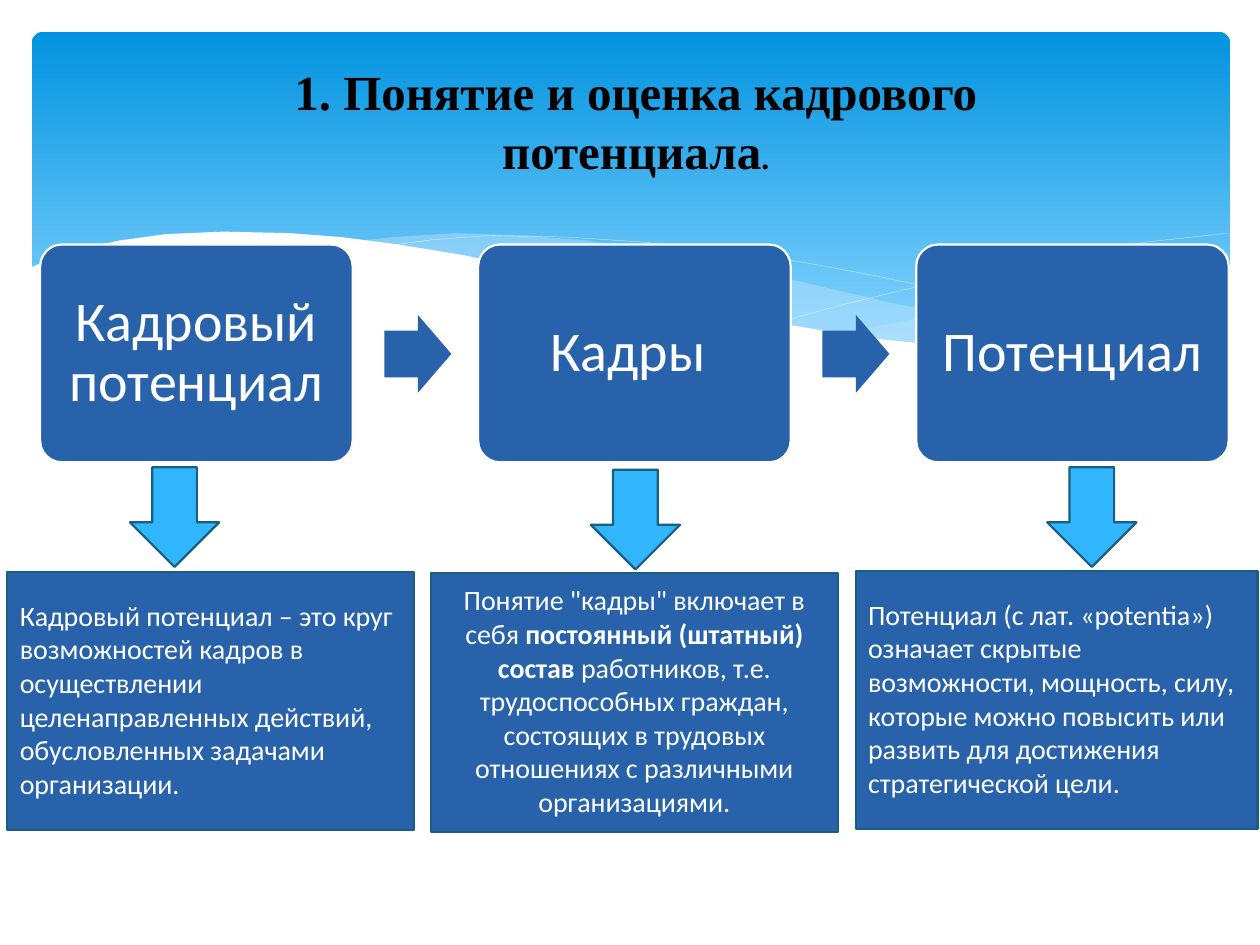
from pptx import Presentation
from pptx.dml.color import RGBColor
from pptx.enum.shapes import MSO_SHAPE as Preset
from pptx.enum.text import MSO_ANCHOR as Anchor, PP_ALIGN as Align
from pptx.oxml.ns import qn
from pptx.util import Cm, Pt
from lxml.etree import SubElement

WHITE, NAVY, SKY, EDGE, MIST = "FFFFFF", "2862AA", "31B6FD", "195F84", "C6E7FC"
CARD_PITCH = 8.83
CARDS = ["Кадровый потенциал", "Кадры ", "Потенциал "]
DEFINITIONS = [
    ((0.15, 11.53, 8.2, 5.21), Align.LEFT, [
        ("Кадровый потенциал – это круг возможностей кадров в осуществлении "
         "целенаправленных действий, обусловленных задачами организации.", {})]),
    ((8.69, 11.56, 8.2, 5.21), Align.CENTER, [
        ('Понятие "кадры" включает в себя ', {}),
        ("постоянный (штатный) состав", {"bold": True}),
        (" работников, т.е. трудоспособных граждан, состоящих в трудовых "
         "отношениях с различными организациями.", {})]),
    ((17.25, 11.51, 8.1, 5.21), Align.LEFT, [
        ("Потенциал (с лат. «potentia») означает скрытые возможности, мощность, "
         "силу, которые можно повысить или развить для достижения "
         "стратегической цели.", {})]),
]
DOWN_ARROWS = [(2.62, 9.42), (11.91, 9.47), (21.11, 9.42)]

RIGHT_WAVE = [
    (24.77, 5.08), (23.75, 5.26), (22.63, 5.49), (21.87, 5.66), (20.45, 6.02),
    (19.13, 6.3), (17.93, 6.53), (16.79, 6.73), (17.91, 6.88), (18.92, 6.99),
    (20.4, 7.06), (21.69, 7.01), (22.78, 6.86), (23.75, 6.65), (24.79, 6.27)]
MIDDLE_WAVE = [
    (22.68, 6.93), (21.26, 6.73), (19.69, 6.45), (17.93, 6.1), (15.98, 5.64),
    (14.45, 5.28), (13.06, 5.03), (11.81, 4.85), (10.67, 4.75), (9.17, 4.7),
    (7.95, 4.78), (7.26, 4.85), (8.69, 5.05), (10.26, 5.36), (11.4, 5.64),
    (13.46, 6.1), (15.27, 6.48), (16.89, 6.76), (18.34, 6.96), (19.63, 7.04),
    (20.78, 7.06), (21.77, 7.04)]
FALLING_CURVE = [
    (7.85, 4.95), (8.74, 4.83), (9.83, 4.75), (11.43, 4.78), (12.95, 4.88),
    (14.78, 5.08), (16.15, 5.28), (17.65, 5.56), (19.3, 5.92), (21.11, 6.38),
    (23.04, 6.91)]
RISING_CURVE = [
    (15.57, 6.53), (17.07, 6.12), (19, 5.66), (20.47, 5.33), (22, 5.05),
    (23.11, 4.88), (24.77, 4.7)]
WHITE_WAVE = [
    (24.82, 6.25), (23.88, 6.58), (22.83, 6.83), (21.59, 6.99), (20.55, 7.04),
    (18.9, 6.96), (17.48, 6.81), (15.9, 6.55), (14.1, 6.22), (12.07, 5.77),
    (10.62, 5.41), (9.27, 5.13), (8.03, 4.93), (6.88, 4.78), (5.84, 4.7),
    (4.5, 4.67), (3.35, 4.72), (2.41, 4.85), (1.7, 5), (1.17, 5.16),
    (0.58, 5.41), (0.58, 8.36), (24.82, 8.36)]


def color(value):
    """Turn a hex string into a colour."""
    return RGBColor.from_string(value)


def apply(target, formats):
    """Set every attribute named in the format dict."""
    for name, value in formats.items():
        setattr(target, name, value)


def paint(shape, fill=None, line=None, width=1.25, alpha=None):
    """Give a shape its fill, outline and transparency, without shadow."""
    shape.shadow.inherit = False
    if fill:
        shape.fill.solid()
        shape.fill.fore_color.rgb = color(fill)
    else:
        shape.fill.background()
    if line:
        shape.line.color.rgb = color(line)
        shape.line.width = Pt(width)
    else:
        shape.line.fill.background()
    if alpha:
        tint = shape.fill._xPr.find(qn("a:solidFill"))[0]
        SubElement(tint, qn("a:alpha")).set("val", str(alpha * 1000))


def add_preset(slide, preset, box, adjustments=(), **style):
    """Add a painted preset shape at a box in centimetres."""
    shape = slide.shapes.add_shape(preset, *map(Cm, box))
    for index, value in enumerate(adjustments):
        shape.adjustments[index] = value
    paint(shape, **style)
    return shape


def add_outline(slide, points, close=True, **style):
    """Add a painted freeform through points in centimetres."""
    start, *others = [(Cm(x), Cm(y)) for x, y in points]
    builder = slide.shapes.build_freeform(*start)
    builder.add_line_segments(others, close=close)
    paint(builder.convert_to_shape(), **style)


def write(shape, runs, font, ink, align, frame=None, spacing=1.0):
    """Write one paragraph of runs into a shape."""
    apply(shape.text_frame, {"word_wrap": True, **(frame or {})})
    paragraph = shape.text_frame.paragraphs[0]
    apply(paragraph, {"alignment": align, "line_spacing": spacing})
    for text, changes in runs:
        run = paragraph.add_run()
        run.text = text
        apply(run.font, {**font, **changes})
        run.font.color.rgb = color(ink)


def add_header(slide):
    """Draw the gradient banner and the waves over it."""
    banner = add_preset(slide, Preset.ROUNDED_RECTANGLE,
                        (0.64, 0.64, 24.16, 6.86), [0.034])
    banner.fill.gradient()
    banner.fill.gradient_angle = 270
    stops = zip(banner.fill.gradient_stops, ((0, "0293E0"), (0.9, "83D3FE")))
    for stop, (position, tint) in stops:
        stop.position = position
        stop.color.rgb = color(tint)
    add_outline(slide, RIGHT_WAVE, fill=MIST, alpha=29)
    add_outline(slide, MIDDLE_WAVE, fill=MIST, alpha=40)
    for curve in (FALLING_CURVE, RISING_CURVE):
        add_outline(slide, curve, close=False, line=WHITE, width=0.1)
    add_outline(slide, WHITE_WAVE, fill=WHITE)


def add_cards(slide):
    """Draw the row of term cards with arrows between them."""
    margins = ("margin_left", "margin_right", "margin_top", "margin_bottom")
    frame = {"vertical_anchor": Anchor.MIDDLE, **dict.fromkeys(margins, Cm(0.3))}
    for index, term in enumerate(CARDS):
        shift = index * CARD_PITCH
        if index:
            add_preset(slide, Preset.RIGHT_ARROW,
                       (7.75 + shift - CARD_PITCH, 6.35, 1.35, 1.57),
                       [0.6, 0.5], fill=NAVY)
        card = add_preset(slide, Preset.ROUNDED_RECTANGLE,
                          (0.81 + shift, 4.93, 6.3, 4.39), [0.1],
                          fill=NAVY, line=WHITE)
        write(card, [(term, {})], {"name": "Calibri", "size": Pt(32)}, WHITE,
              Align.CENTER, frame, 0.9)


def add_definitions(slide):
    """Draw the definition boxes and the arrows leading to them."""
    frame = {"vertical_anchor": Anchor.MIDDLE, "margin_bottom": Cm(0.21)}
    for box, align, runs in DEFINITIONS:
        definition = add_preset(slide, Preset.RECTANGLE, box, fill=NAVY, line=EDGE)
        write(definition, runs, {"name": "Calibri", "size": Pt(16)}, WHITE, align,
              frame)
    for left, top in DOWN_ARROWS:
        add_preset(slide, Preset.DOWN_ARROW, (left, top, 1.8, 2.01),
                   fill=SKY, line=EDGE)


def add_title(slide):
    """Write the slide title."""
    title = slide.shapes.add_textbox(*map(Cm, (5.31, 1.12, 15.01, 2.64)))
    write(title, [("1. Понятие и оценка кадрового потенциала", {}),
                  (".", {"size": Pt(18)})],
          {"name": "Times New Roman", "size": Pt(28), "bold": True},
          "000000", Align.CENTER)


def main():
    """Build and save the slide."""
    deck = Presentation()
    apply(deck, {"slide_width": Cm(25.4), "slide_height": Cm(19.05)})
    slide = deck.slides.add_slide(deck.slide_layouts[6])
    add_header(slide)
    add_cards(slide)
    add_definitions(slide)
    add_title(slide)
    deck.save("out.pptx")


if __name__ == "__main__":
    main()
